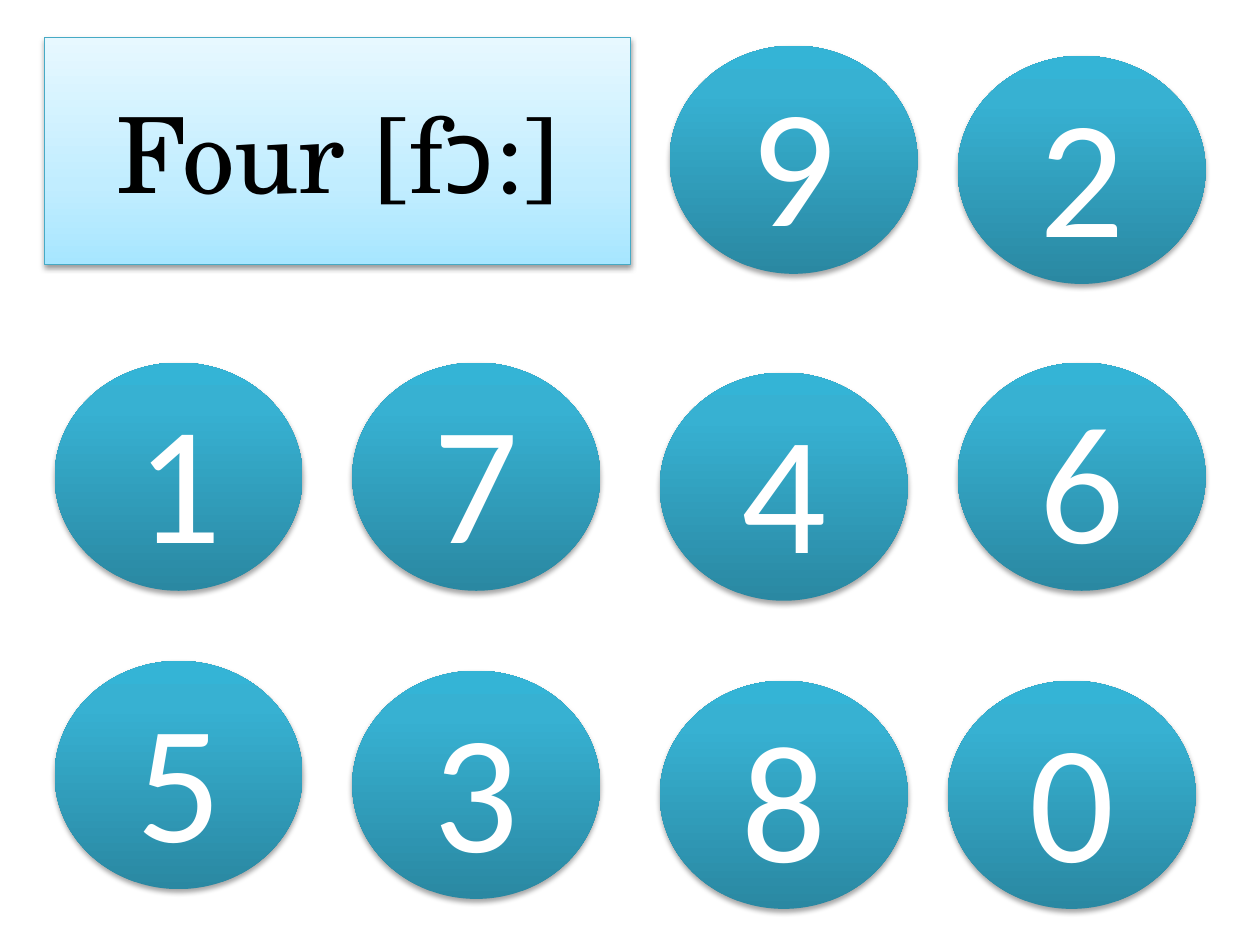
"""Build a slide that asks which numbered disc matches the word Four."""
from dataclasses import dataclass

from lxml.etree import SubElement
from pptx import Presentation
from pptx.dml.color import RGBColor
from pptx.enum.shapes import MSO_SHAPE as Preset
from pptx.enum.text import MSO_ANCHOR as Anchor, PP_ALIGN as Align
from pptx.oxml.ns import qn
from pptx.util import Pt

DISC_WIDTH, DISC_HEIGHT = 141.7, 130.4


@dataclass(frozen=True)
class Disc:
    digit: str
    left: float
    top: float


@dataclass(frozen=True)
class Look:
    stops: tuple[tuple[int, str], ...]
    shadow_distance: float
    shadow_opacity: int
    font_name: str
    font_size: float
    font_color: str


CARD_LOOK = Look(((0, "A7E6FF"), (35, "C1EDFF"), (100, "E7F8FF")),
                 1.6, 38, "TeX Gyre Schola", 60, "000000")
DISC_LOOK = Look(((0, "2A88A2"), (80, "37B1D2"), (100, "34B4D6")),
                 1.8, 35, "Calibri", 96, "FFFFFF")

DISCS = (
    Disc("2", 547.2, 31.9),
    Disc("1", 31.2, 207.2),
    Disc("7", 201.3, 207.2),
    Disc("4", 377, 212.9),
    Disc("6", 547.2, 207.2),
    Disc("5", 31.2, 377.7),
    Disc("3", 201.3, 383.3),
    Disc("8", 377, 389),
    Disc("0", 541.5, 389),
    Disc("9", 382.6, 26.1),
)


def rgb(color: str) -> RGBColor:
    return RGBColor.from_string(color)


def add_color(parent, color: str):
    return SubElement(parent, qn("a:srgbClr"), val=color)


def apply_gradient(shape, stops: tuple[tuple[int, str], ...]) -> None:
    shape.fill.gradient()
    shape.fill.gradient_angle = 90
    stop_list = next(shape.element.spPr.iter(qn("a:gsLst")))
    for old_stop in list(stop_list):
        stop_list.remove(old_stop)
    for position, color in stops:
        add_color(SubElement(stop_list, qn("a:gs"), pos=str(position * 1000)), color)


def apply_shadow(shape, distance: float, opacity: int) -> None:
    shape.shadow.inherit = False
    effects = shape.element.spPr.find(qn("a:effectLst"))
    shadow = SubElement(effects, qn("a:outerShdw"), blurRad=str(Pt(3.1)),
                        dist=str(Pt(distance)), dir="5400000", rotWithShape="0")
    SubElement(add_color(shadow, "000000"), qn("a:alpha"), val=str(opacity * 1000))


def apply_look(shape, text: str, look: Look) -> None:
    apply_gradient(shape, look.stops)
    apply_shadow(shape, look.shadow_distance, look.shadow_opacity)
    text_frame = shape.text_frame
    text_frame.text = text
    text_frame.vertical_anchor = Anchor.MIDDLE
    paragraph = text_frame.paragraphs[0]
    paragraph.alignment = Align.CENTER
    paragraph.font.name = look.font_name
    paragraph.font.size = Pt(look.font_size)
    paragraph.font.color.rgb = rgb(look.font_color)


def draw_card(slide, text: str) -> None:
    card = slide.shapes.title
    card.left, card.top, card.width, card.height = Pt(25.5), Pt(21.5), Pt(334.8), Pt(129.6)
    card.line.color.rgb = rgb("46AAC5")
    card.line.width = Pt(0.75)
    apply_look(card, text, CARD_LOOK)


def draw_disc(slide, disc: Disc) -> None:
    shape = slide.shapes.add_shape(Preset.OVAL, Pt(disc.left), Pt(disc.top),
                                   Pt(DISC_WIDTH), Pt(DISC_HEIGHT))
    shape.line.fill.background()
    apply_look(shape, disc.digit, DISC_LOOK)


def main() -> None:
    presentation = Presentation()
    presentation.slide_width, presentation.slide_height = Pt(720), Pt(540)
    slide = presentation.slides.add_slide(presentation.slide_layouts[5])
    draw_card(slide, "Four [fɔ:]")
    for disc in DISCS:
        draw_disc(slide, disc)
    presentation.save("out.pptx")


if __name__ == "__main__":
    main()
